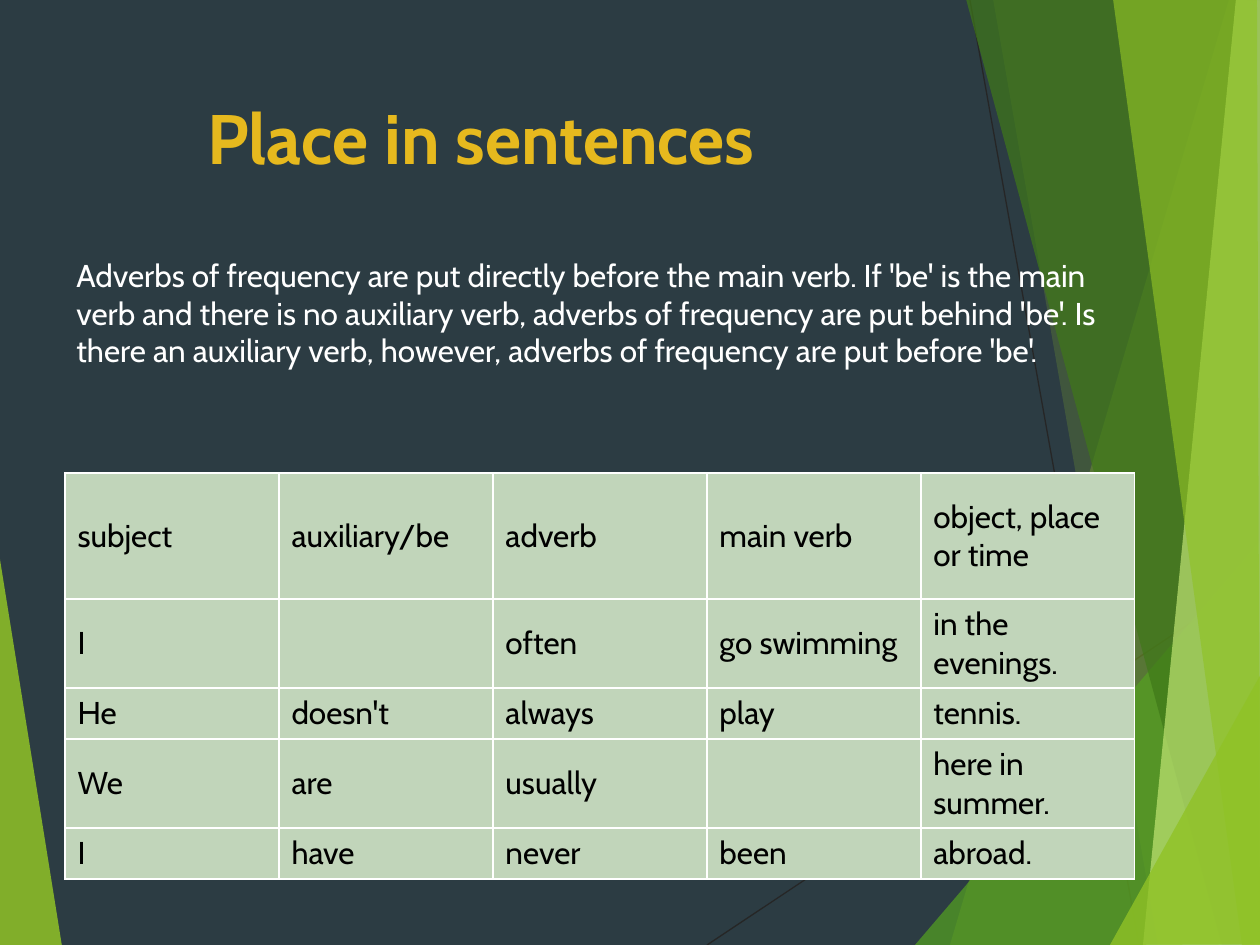
from dataclasses import dataclass

from lxml import etree
from pptx import Presentation
from pptx.dml.color import RGBColor
from pptx.enum import shapes, text
from pptx.oxml import ns
from pptx.util import Emu, Pt

SCALE = 914400 / 126  # EMU per px


@dataclass(frozen=True)
class Theme:
    font: str = "Cabin"
    title_size: int = 40
    body_size: int = 18
    background: str = "2C3C43"
    gold: str = "E6B91E"
    white: str = "FFFFFF"
    black: str = "000000"
    ray: str = "262626"
    cell: str = "C1D5BA"
    lime: str = "90C226"
    green: str = "54A021"
    forest: str = "3F7819"
    pale: str = "C0E474"


THEME = Theme()

RAYS = [(707, 945, 1261, 576), (970, 0, 1139, 945)]

# Colour, opacity in percent, corner points
FACETS = [
    (THEME.lime, 85, [(-1, 553), (62, 946), (-1, 945)]),
    (THEME.lime, 30, [(1229, 0), (950, 945), (1263, 946), (1261, 1)]),
    (THEME.lime, 20, [(993, -1), (1158, 945), (1261, 945), (1261, -1)]),
    (THEME.green, 72, [(915, 945), (1260, 541), (1261, 945)]),
    (THEME.forest, 70, [(966, -1), (1222, 945), (1261, 944), (1261, -1)]),
    (THEME.pale, 70, [(1236, -1), (1143, 945), (1261, 945), (1260, -1)]),
    (THEME.lime, 65, [(1113, -1), (1242, 945), (1260, 945), (1257, -1)]),
    (THEME.lime, 80, [(1110, 945), (1261, 674), (1261, 944)]),
]

RULE = (
    "Adverbs of frequency are put directly before the main verb. "
    "If 'be' is the main verb and there is no auxiliary verb, "
    "adverbs of frequency are put behind 'be'. Is there an auxiliary verb, "
    "however, adverbs of frequency are put before 'be'."
)

COLUMN_WIDTH = 214
ROW_HEIGHTS = [126, 89, 51, 89, 51]
SENTENCES = [
    ["subject", "auxiliary/be", "adverb", "main verb", "object, place or time"],
    ["I", "", "often", "go swimming", "in the evenings."],
    ["He", "doesn't", "always", "play", "tennis."],
    ["We", "are", "usually", "", "here in summer."],
    ["I", "have", "never", "been", "abroad."],
]


def px(n):
    return Emu(round(n * SCALE))


def rgb(color):
    return RGBColor.from_string(color)


def add_solid_fill(parent, color):
    fill = etree.SubElement(parent, ns.qn("a:solidFill"))
    etree.SubElement(fill, ns.qn("a:srgbClr"), val=color)


def add_run(p, words, size, color, bold=False):
    r = p.add_run()
    r.text = words
    r.font.name = THEME.font
    r.font.size = Pt(size)
    r.font.bold = bold
    r.font.color.rgb = rgb(color)
    return r


def add_ray(s, x1, y1, x2, y2):
    line = s.shapes.add_connector(
        shapes.MSO_CONNECTOR.STRAIGHT, px(x1), px(y1), px(x2), px(y2))
    line.line.color.rgb = rgb(THEME.ray)
    line.line.width = Pt(0.75)
    etree.SubElement(line._element.spPr, ns.qn("a:effectLst"))


def add_facet(s, color, opacity, points):
    builder = s.shapes.build_freeform(*points[0], scale=SCALE)
    builder.add_line_segments(points[1:], close=True)
    sp = builder.convert_to_shape()
    sp.shadow.inherit = False
    sp.line.fill.background()
    sp.fill.solid()
    sp.fill.fore_color.rgb = rgb(color)
    clr = sp._element.spPr.find(".//" + ns.qn("a:srgbClr"))
    etree.SubElement(clr, ns.qn("a:alpha"), val=str(opacity * 1000))


def place_title(s, words):
    title = s.shapes.title
    title.left, title.top, title.width, title.height = map(px, (44, 37, 874, 200))
    tf = title.text_frame
    tf.auto_size = text.MSO_AUTO_SIZE.NONE
    tf.vertical_anchor = text.MSO_ANCHOR.MIDDLE
    p = tf.paragraphs[0]
    p.alignment = text.PP_ALIGN.CENTER
    r = add_run(p, words, THEME.title_size, THEME.gold, bold=True)
    # White letter outline, which must come first in the run properties
    outline = etree.Element(ns.qn("a:ln"), w=str(Pt(1.5)))
    add_solid_fill(outline, THEME.white)
    r.font._element.insert(0, outline)
    # Bring the title in front of the facets
    s.shapes._spTree.append(title._element)


def add_body(s, words):
    tf = s.shapes.add_textbox(px(64), px(204), px(1092), px(217)).text_frame
    tf.word_wrap = True
    tf.vertical_anchor = text.MSO_ANCHOR.MIDDLE
    p = tf.paragraphs[0]
    p.space_before = Pt(10)
    add_run(p, words, THEME.body_size, THEME.white)


def format_cell(cell, words):
    cell.vertical_anchor = text.MSO_ANCHOR.MIDDLE
    if words:
        add_run(cell.text_frame.paragraphs[0], words, THEME.body_size, THEME.black)
    # Borders precede the fill in the cell properties
    props = cell._tc.get_or_add_tcPr()
    for side in ("lnL", "lnR", "lnT", "lnB"):
        border = etree.SubElement(props, ns.qn("a:" + side), w=str(Pt(1)))
        add_solid_fill(border, THEME.white)
    cell.fill.solid()
    cell.fill.fore_color.rgb = rgb(THEME.cell)


def add_sentence_table(s, rows):
    count = len(rows[0])
    table = s.shapes.add_table(
        len(rows), count, px(65), px(473),
        px(COLUMN_WIDTH * count), px(sum(ROW_HEIGHTS))).table
    table.first_row = table.horz_banding = False
    for column in table.columns:
        column.width = px(COLUMN_WIDTH)
    for i, (height, row) in enumerate(zip(ROW_HEIGHTS, rows)):
        table.rows[i].height = px(height)
        for j, words in enumerate(row):
            format_cell(table.cell(i, j), words)


def main():
    prs = Presentation()
    prs.slide_width, prs.slide_height = px(1260), px(945)
    s = prs.slides.add_slide(prs.slide_layouts[5])

    # Background
    s.background.fill.solid()
    s.background.fill.fore_color.rgb = rgb(THEME.background)
    for ray in RAYS:
        add_ray(s, *ray)
    for facet in FACETS:
        add_facet(s, *facet)

    # Content
    place_title(s, "Place in sentences")
    add_body(s, RULE)
    add_sentence_table(s, SENTENCES)

    prs.save("out.pptx")


if __name__ == "__main__":
    main()
